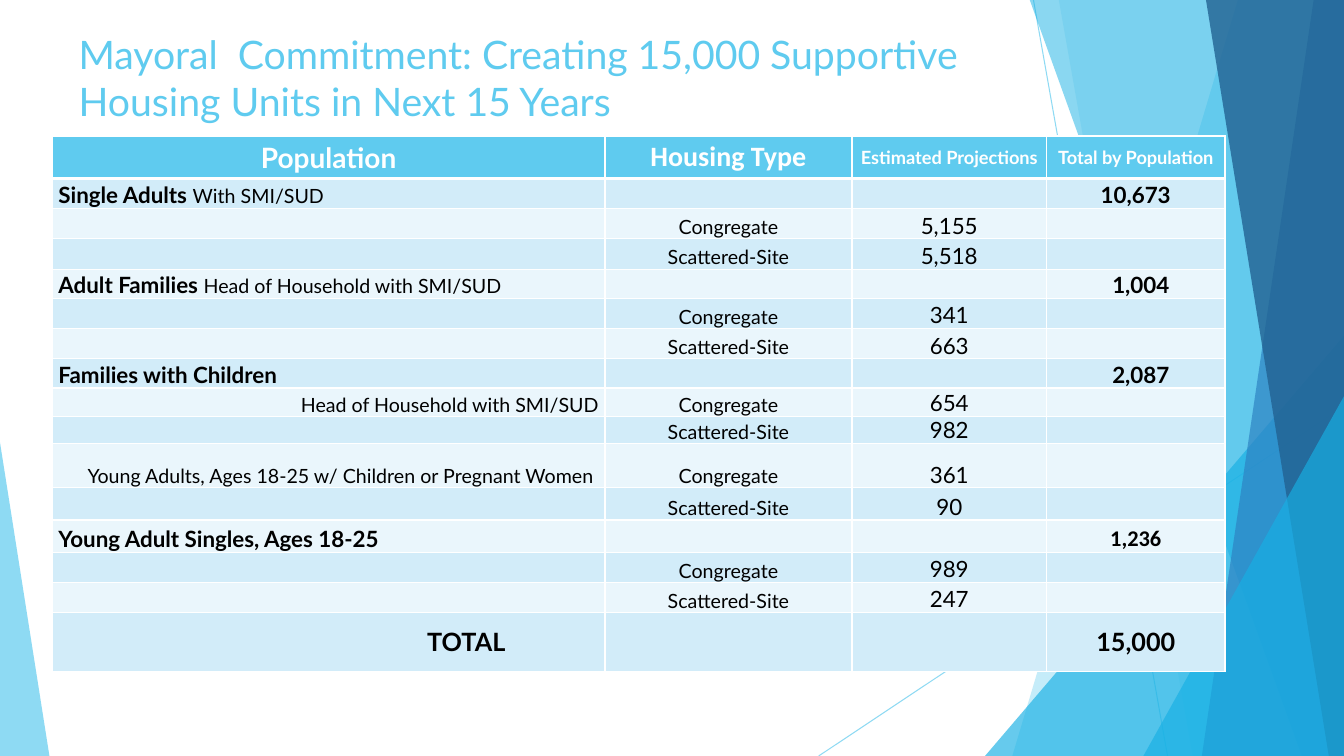
from lxml import etree
from pptx import Presentation
from pptx import util as u
from pptx.dml.color import RGBColor
from pptx.enum import shapes, text
from pptx.oxml.ns import qn

COLORS = {"sky": "5FCBEF", "cyan": "17B0E4", "blue": "2E83C3", "navy": "226292",
          "white": "FFFFFF", "black": "000000", "band": "D2ECF9", "pale": "EAF6FC"}
CENTER, LEFT, RIGHT = text.PP_ALIGN.CENTER, text.PP_ALIGN.LEFT, text.PP_ALIGN.RIGHT


def write(para, words, size=16, bold=False, font="Lato", color="black", align=CENTER):
    para.alignment = align
    span = para.add_run()
    span.text = words
    span.font.size = u.Pt(size)
    span.font.bold = bold
    span.font.name = font
    span.font.color.rgb = RGBColor.from_string(COLORS[color])


def paint(fill, color, opacity=100):
    fill.solid()
    fill.fore_color.rgb = RGBColor.from_string(COLORS[color])
    if opacity < 100:
        tint = fill._xPr.find(qn("a:solidFill"))[0]
        etree.SubElement(tint, qn("a:alpha"), val=str(opacity * 1000))


deck = Presentation()
deck.slide_width, deck.slide_height = u.Inches(13.33), u.Inches(7.5)
page = deck.slides.add_slide(deck.slide_layouts[5])

# Thin background lines
for x1, y1, x2, y2 in [(10.25, 0, 11.58, 7.5), (13.33, 4.03, 8.12, 7.5)]:
    line = page.shapes.add_connector(shapes.MSO_CONNECTOR.STRAIGHT, u.Inches(x1),
                                     u.Inches(y1), u.Inches(x2), u.Inches(y2))
    line.line.width = u.Pt(0.75)
    paint(line.line.fill, "sky", 70)
    etree.SubElement(line._element.spPr, qn("a:effectLst"))

# Translucent facets: panels (top left x, bottom left x) run to the right edge,
# triangles (left, top, width, height, apex)
facets = [
    ((12.28, 10.04), "sky", 36),
    ((10.5, 11.83), "sky", 20),
    ((9.77, 3.33, 3.56, 4.17, 1), "cyan", 66),
    ((10.21, 12.91), "cyan", 50),
    ((13.03, 11.92), "blue", 70),
    ((11.96, 13.18), "navy", 80),
    ((11.34, 3.93, 1.99, 3.57, 1), "cyan", 66),
    ((0, 4.39, 0.49, 3.11, 0), "sky", 70),
]
for geometry, color, opacity in facets:
    if len(geometry) == 2:
        top_x, bottom_x = geometry
        outline = page.shapes.build_freeform(u.Inches(top_x), u.Inches(-0.01))
        corners = [(13.33, -0.01), (13.33, 7.5), (bottom_x, 7.5)]
        outline.add_line_segments([(u.Inches(x), u.Inches(y)) for x, y in corners])
        facet = outline.convert_to_shape()
    else:
        *place, apex = geometry
        facet = page.shapes.add_shape(shapes.MSO_SHAPE.ISOSCELES_TRIANGLE,
                                      *[u.Inches(v) for v in place])
        facet.adjustments[0] = apex
    paint(facet.fill, color, opacity)
    facet.line.fill.background()
    facet.shadow.inherit = False

# Title, in front of the facets
title = page.shapes.title
page.shapes._spTree.append(title._element)
title.left, title.top = u.Inches(0.68), u.Inches(0.25)
title.width, title.height = u.Inches(9.99), u.Inches(1.25)
frame = title.text_frame
frame.word_wrap = True
frame.auto_size = text.MSO_AUTO_SIZE.NONE
frame.vertical_anchor = text.MSO_ANCHOR.TOP
write(frame.paragraphs[0],
      "Mayoral  Commitment: Creating 15,000 Supportive Housing Units in Next 15 Years",
      size=28, color="sky", align=LEFT)

# Table contents: each cell is a list of (words, format) spans
small = {"size": 14}
strong = {"bold": True}
group = {"bold": True, "align": LEFT}
detail = {"size": 14, "align": LEFT}
indented = {"size": 14, "align": RIGHT}
head = {"bold": True, "color": "white"}
grand = {"size": 18, "bold": True}
congregate = [("Congregate", small)]
scattered = [("Scattered-Site", small)]
rows = [
    (0.42, [("Population", {**head, "size": 20})],
     [("Housing Type", {**head, "size": 20, "font": "Calibri"})],
     [("Estimated Projections", {**head, "size": 13})],
     [("Total by Population", {**head, "size": 13})]),
    (0.3, [("Single Adults ", group), ("With SMI/SUD", detail)], [], [], [("10,673", strong)]),
    (0.3, [], congregate, [("5,155", {})], []),
    (0.3, [], scattered, [("5,518", {})], []),
    (0.29, [("Adult Families ", group), ("Head of Household with SMI/SUD", detail)],
     [], [], [("1,004", strong)]),
    (0.3, [], congregate, [("341", {})], []),
    (0.3, [], scattered, [("663", {})], []),
    (0.29, [("Families with Children", group)], [], [], [("2,087", strong)]),
    (0.28, [("Head of Household with SMI/SUD", indented)], congregate, [("654", {})], []),
    (0.27, [], scattered, [("982", {})], []),
    (0.44, [("Young Adults, Ages 18-25 w/ Children or Pregnant Women", indented)],
     congregate, [("361", {})], []),
    (0.32, [], scattered, [("90", {})], []),
    (0.32, [("Young Adult Singles, Ages 18-25", group)], [], [],
     [("1,236", {**strong, "font": "Calibri"})]),
    (0.3, [], congregate, [("989", {})], []),
    (0.3, [], scattered, [("247", {})], []),
    (0.58, [("TOTAL", grand)], [], [], [("15,000", grand)]),
]
left_insets = {(4, 3): 0.16, (7, 3): 0.16, (15, 0): 2.79}
right_insets = {(10, 0): 0.11}

# Table
table = page.shapes.add_table(len(rows), 4, u.Inches(0.52), u.Inches(1.35),
                              u.Inches(11.62), u.Inches(5.3)).table
for column, width in zip(table.columns, [5.48, 2.45, 1.93, 1.77]):
    column.width = u.Inches(width)
for r, (height, *contents) in enumerate(rows):
    table.rows[r].height = u.Inches(height)
    for c, spans in enumerate(contents):
        cell = table.cell(r, c)
        cell.margin_left = u.Inches(left_insets.get((r, c), 0.06))
        cell.margin_right = u.Inches(right_insets.get((r, c), 0.06))
        cell.margin_top = cell.margin_bottom = 0
        middle = r in (0, len(rows) - 1)
        cell.vertical_anchor = text.MSO_ANCHOR.MIDDLE if middle else text.MSO_ANCHOR.BOTTOM
        for side in "LRTB":
            points = 3 if (r == 0 and side == "B") or (r == 1 and side == "T") else 1
            edge = etree.SubElement(cell._tc.tcPr, qn("a:ln" + side), w=str(u.Pt(points)))
            ink = etree.SubElement(edge, qn("a:solidFill"))
            etree.SubElement(ink, qn("a:srgbClr"), val=COLORS["white"])
        paint(cell.fill, "sky" if r == 0 else "band" if r % 2 else "pale")
        para = cell.text_frame.paragraphs[0]
        for words, style in spans:
            write(para, words, **style)
        if not spans:  # keeps empty cells from stretching their row
            etree.SubElement(para._p, qn("a:endParaRPr"), sz="1400")

deck.save("out.pptx")
